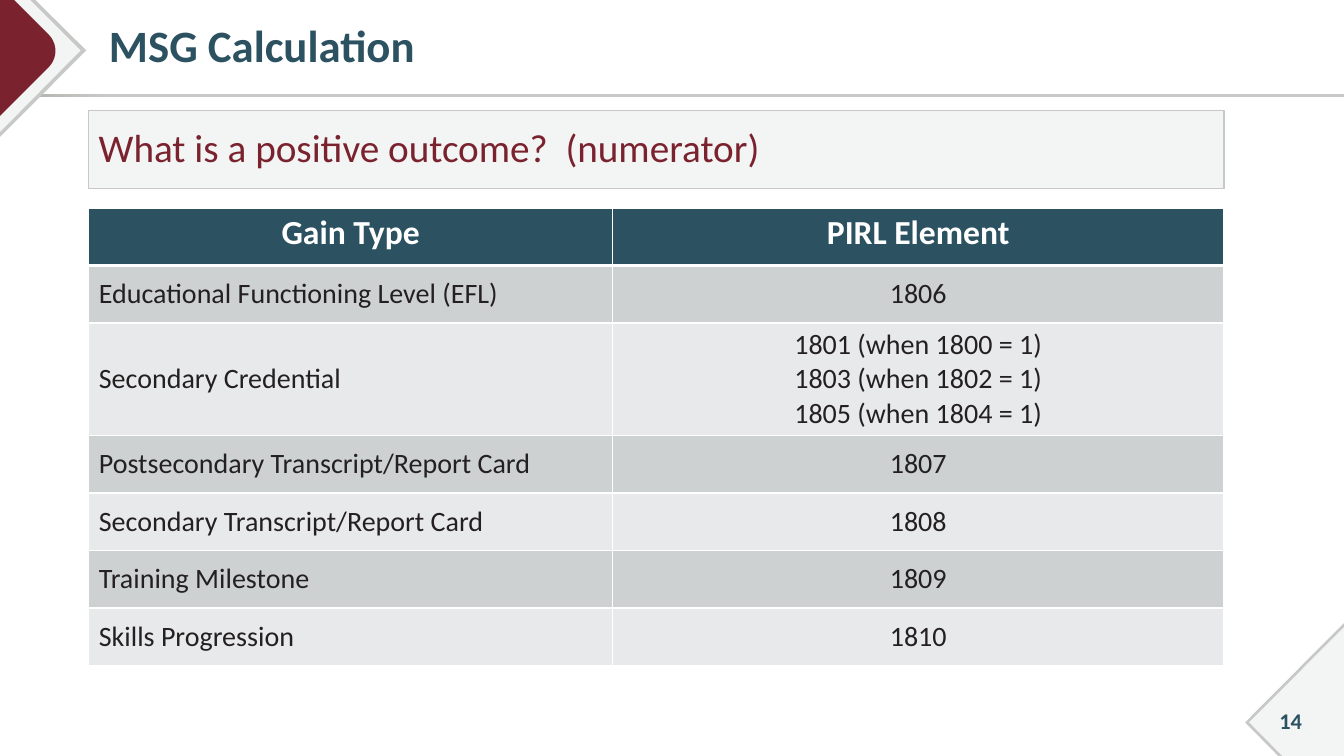
from lxml import etree
from pptx import Presentation
from pptx.dml.color import RGBColor
from pptx.enum.shapes import MSO_SHAPE
from pptx.enum.text import MSO_ANCHOR, MSO_AUTO_SIZE, PP_ALIGN
from pptx.oxml.ns import qn
from pptx.util import Pt

RECTANGLE = MSO_SHAPE.RECTANGLE
MIDDLE, TOP = MSO_ANCHOR.MIDDLE, MSO_ANCHOR.TOP
LEFT, CENTER = PP_ALIGN.LEFT, PP_ALIGN.CENTER
NO_AUTOFIT = MSO_AUTO_SIZE.NONE

FONT = "Calibri"
WHITE = RGBColor(0xFF, 0xFF, 0xFF)
TEAL = RGBColor(0x2C, 0x52, 0x61)
MAROON = RGBColor(0x7A, 0x23, 0x2F)
INK = RGBColor(0x24, 0x20, 0x21)
PALE = RGBColor(0xF3, 0xF4, 0xF4)
SILVER = RGBColor(0xC8, 0xC8, 0xC6)
DARK_SILVER = RGBColor(0xAB, 0xAB, 0xA8)
BAND_DARK = RGBColor(0xCD, 0xD1, 0xD2)
BAND_LIGHT = RGBColor(0xE8, 0xE9, 0xEA)

PAGE_WIDTH, PAGE_HEIGHT = 960, 540
CONTENT_LEFT = 63.4
COLUMN_WIDTHS = (374.2, 436.7)
ROW_HEIGHT, TALL_ROW_HEIGHT = 41.1, 80.5

GAINS = [
    ("Gain Type", "PIRL Element"),
    ("Educational Functioning Level (EFL)", "1806"),
    ("Secondary Credential",
     "1801 (when 1800 = 1)\n1803 (when 1802 = 1)\n1805 (when 1804 = 1)"),
    ("Postsecondary Transcript/Report Card", "1807"),
    ("Secondary Transcript/Report Card", "1808"),
    ("Training Milestone", "1809"),
    ("Skills Progression", "1810"),
]


def write(frame, text, size, color, bold=False, align=LEFT, spacing=None):
    frame.text = text
    for para in frame.paragraphs:
        para.alignment = align
        para.line_spacing = spacing
        for span in para.runs:
            span.font.name = FONT
            span.font.size = Pt(size)
            span.font.bold = bold
            span.font.color.rgb = color


def add_polygon(page, points, color):
    builder = page.shapes.build_freeform(Pt(points[0][0]), Pt(points[0][1]))
    builder.add_line_segments([(Pt(x), Pt(y)) for x, y in points[1:]], close=True)
    shape = builder.convert_to_shape()
    shape.shadow.inherit = False
    shape.fill.solid()
    shape.fill.fore_color.rgb = color
    shape.line.fill.background()


def curve_points(start, control_1, control_2, end, steps=16):
    """Points along a cubic curve."""
    points = []
    for step in range(steps + 1):
        t = step / steps
        weights = ((1 - t) ** 3, 3 * t * (1 - t) ** 2, 3 * t * t * (1 - t), t ** 3)
        knots = (start, control_1, control_2, end)
        points.append(tuple(sum(w * knot[axis] for w, knot in zip(weights, knots))
                            for axis in (0, 1)))
    return points


def add_rectangle(page, left, top, width, height):
    box = page.shapes.add_shape(RECTANGLE, Pt(left), Pt(top), Pt(width), Pt(height))
    box.shadow.inherit = False
    return box


def add_header_rule(page):
    rule = add_rectangle(page, 0, 67, PAGE_WIDTH, 2.2)
    rule.line.fill.background()
    rule.fill.gradient()
    rule.fill.gradient_angle = 0
    stops = zip(rule.fill.gradient_stops, (0, 0.08), (DARK_SILVER, SILVER))
    for stop, position, color in stops:
        stop.position = position
        stop.color.rgb = color


def add_corners(page):
    # Top left: two diamonds and a rounded maroon tip
    add_polygon(page, [(0, 0), (25.2, 0), (61.6, 36), (0, 97.9)], SILVER)
    add_polygon(page, [(0, 0), (21.6, 0), (57.6, 36), (0, 94.3)], PALE)
    tip = curve_points((34.6, 24.5), (41.3, 31.2), (41.3, 41.5), (34.6, 48.2))
    add_polygon(page, [(0, 0), (10.1, 0), *tip, (0, 82.8)], MAROON)
    # Bottom right: two diamonds behind the page number
    for top, bottom_x, tip_x, color in ((445, 913, 889.4, SILVER),
                                        (448, 916, 892.3, PALE)):
        add_polygon(page, [(PAGE_WIDTH, top), (PAGE_WIDTH, PAGE_HEIGHT),
                           (bottom_x, PAGE_HEIGHT), (tip_x, 516)], color)


def add_page_number(page, number):
    box = page.shapes.add_textbox(Pt(896.4), Pt(500.4), Pt(51), Pt(29))
    box.text_frame.word_wrap = True
    box.text_frame.vertical_anchor = MIDDLE
    write(box.text_frame, number, 16, TEAL, bold=True, align=CENTER)


def set_title(page, text):
    title = page.shapes.title
    title.left, title.top = Pt(CONTENT_LEFT), Pt(3.6)
    title.width, title.height = Pt(872.6), Pt(62)
    frame = title.text_frame
    frame.auto_size = NO_AUTOFIT
    frame.vertical_anchor = MIDDLE
    frame.margin_left = Pt(14.4)
    write(frame, text, 32, TEAL, bold=True, spacing=0.9)


def add_question(page, text):
    box = add_rectangle(page, CONTENT_LEFT, 78.8, sum(COLUMN_WIDTHS), 55.8)
    box.fill.solid()
    box.fill.fore_color.rgb = PALE
    box.line.color.rgb = SILVER
    box.line.width = Pt(0.75)
    box.text_frame.word_wrap = True
    box.text_frame.vertical_anchor = MIDDLE
    write(box.text_frame, text, 28, MAROON, spacing=0.95)


def set_borders(cell, widths):
    properties = cell._tc.get_or_add_tcPr()
    for side, width in zip("LRTB", widths):
        line = etree.SubElement(properties, qn(f"a:ln{side}"), w=str(Pt(width)))
        fill = etree.SubElement(line, qn("a:solidFill"))
        etree.SubElement(fill, qn("a:srgbClr"), val=str(WHITE))


def add_gain_table(page):
    heights = [TALL_ROW_HEIGHT if "\n" in element else ROW_HEIGHT
               for _, element in GAINS]
    table = page.shapes.add_table(
        len(GAINS), len(COLUMN_WIDTHS), Pt(CONTENT_LEFT), Pt(148.5),
        Pt(sum(COLUMN_WIDTHS)), Pt(sum(heights))).table
    for column, width in zip(table.columns, COLUMN_WIDTHS):
        column.width = Pt(width)
    for row, height in zip(table.rows, heights):
        row.height = Pt(height)

    for row_index, texts in enumerate(GAINS):
        header = row_index == 0
        band = BAND_DARK if row_index % 2 else BAND_LIGHT
        # The line below the header is thicker
        widths = (1, 1, 3 if row_index == 1 else 1, 3 if header else 1)
        for column_index, text in enumerate(texts):
            cell = table.cell(row_index, column_index)
            set_borders(cell, widths)
            cell.fill.solid()
            cell.fill.fore_color.rgb = TEAL if header else band
            cell.vertical_anchor = TOP if header else MIDDLE
            align = CENTER if header or column_index else LEFT
            write(cell.text_frame, text, 24 if header else 20,
                  WHITE if header else INK, bold=header, align=align)


def main():
    deck = Presentation()
    deck.slide_width, deck.slide_height = Pt(PAGE_WIDTH), Pt(PAGE_HEIGHT)
    page = deck.slides.add_slide(deck.slide_layouts[5])
    # Frame of the page
    add_header_rule(page)
    add_corners(page)
    add_page_number(page, "14")
    # Content
    set_title(page, "MSG Calculation")
    add_question(page, "What is a positive outcome?  (numerator)")
    add_gain_table(page)
    deck.save("out.pptx")


if __name__ == "__main__":
    main()
